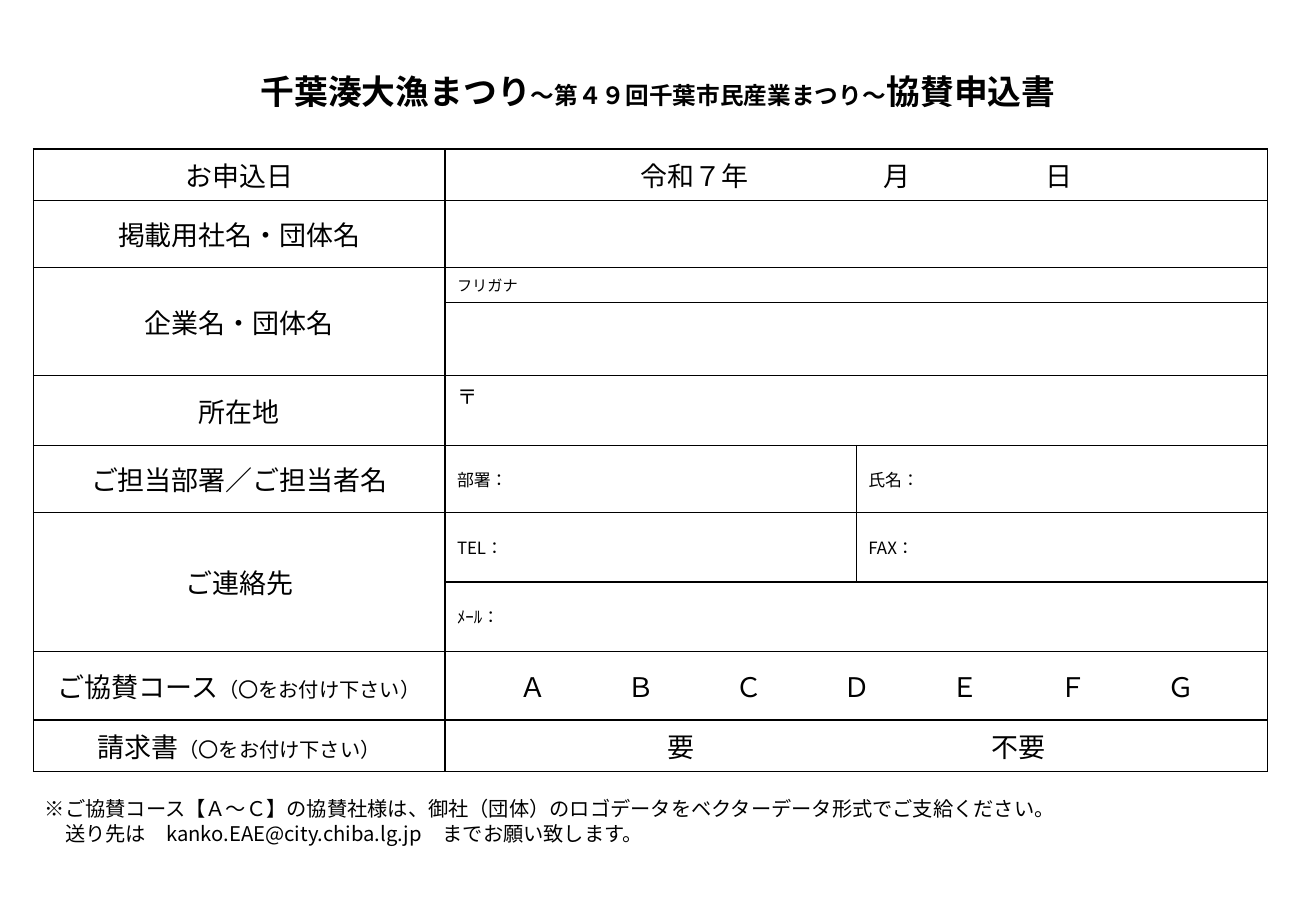
from lxml import etree
from pptx import Presentation
from pptx.dml.color import RGBColor
from pptx.enum.lang import MSO_LANGUAGE_ID
from pptx.enum.text import MSO_ANCHOR, PP_ALIGN
from pptx.oxml.ns import qn
from pptx.util import Cm, Pt

LEFT, CENTER = PP_ALIGN.LEFT, PP_ALIGN.CENTER
TOP, MIDDLE = MSO_ANCHOR.TOP, MSO_ANCHOR.MIDDLE
JAPANESE = MSO_LANGUAGE_ID.JAPANESE
FONT = "Noto Sans CJK JP"
COLORS = {"ink": "000000"}
EM = 16 * 2.54 / 72  # width of one 16 pt character in cm
ANSWER_WIDTH = 16.71  # text width of the answer column in cm


def write(paragraph, spans, align=LEFT, bold=False):
    """Fill a paragraph with (text, size) spans."""
    paragraph.alignment = align
    for text, size in spans:
        span = paragraph.add_run()
        span.text = text
        span.font.size = Pt(size)
        span.font.name = FONT
        span.font.bold = bold
        span.font.language_id = JAPANESE
        span.font.color.rgb = RGBColor.from_string(COLORS["ink"])
        east_asian = etree.SubElement(span._r.get_or_add_rPr(), qn("a:ea"))
        east_asian.set("typeface", FONT)


def add_tabs(paragraph, positions):
    """Add left tab stops, given in cm."""
    tabs = etree.SubElement(paragraph._p.get_or_add_pPr(), qn("a:tabLst"))
    for position in positions:
        etree.SubElement(tabs, qn("a:tab"), pos=str(Cm(position)), algn="l")


deck = Presentation()
deck.slide_width, deck.slide_height = Cm(27.51), Cm(19.05)
page = deck.slides.add_slide(deck.slide_layouts[6])

# Title
box = page.shapes.add_textbox(Cm(5.13), Cm(0.91), Cm(17.25), Cm(1.42))
box.text_frame.word_wrap = False
title = box.text_frame.paragraphs[0]
title.line_spacing = Pt(36.5)
write(title, [("千葉湊大漁まつり", 20),
              ("～第４９回千葉市民産業まつり～", 14),
              ("協賛申込書", 20)], CENTER, bold=True)

# Form table
row_heights = [1.07, 1.4, 0.74, 1.52, 1.47, 1.4, 1.45, 1.45, 1.44, 1.07]
form = page.shapes.add_table(len(row_heights), 3, Cm(0.7), Cm(3.12),
                             Cm(25.8), Cm(sum(row_heights))).table
form.first_row = form.horz_banding = False
for column in form.columns:
    column.width = Cm(8.6)
for row, height in zip(form.rows, row_heights):
    row.height = Cm(height)

# Cell borders and fill
for cell in form.iter_cells():
    properties = cell._tc.get_or_add_tcPr()
    for side in ("lnL", "lnR", "lnT", "lnB"):
        line = etree.SubElement(properties, qn(f"a:{side}"), w=str(Pt(1)))
        fill = etree.SubElement(line, qn("a:solidFill"))
        etree.SubElement(fill, qn("a:srgbClr"), val=COLORS["ink"])
    cell.fill.background()
    cell.vertical_anchor = MIDDLE

# Merged cells
for row in (0, 1, 2, 3, 4, 7, 8, 9):
    form.cell(row, 1).merge(form.cell(row, 2))
for row in (2, 6):
    form.cell(row, 0).merge(form.cell(row + 1, 0))

# Row labels
circle_hint = ("（〇をお付け下さい）", 12)
labels = {
    0: [("お申込日", 16)],
    1: [("掲載用社名・団体名", 16)],
    2: [("企業名・団体名", 16)],
    4: [("所在地", 16)],
    5: [("ご担当部署／ご担当者名", 16)],
    6: [("ご連絡先", 16)],
    8: [("ご協賛コース", 16), circle_hint],
    9: [("請求書", 16), circle_hint],
}
for row, spans in labels.items():
    write(form.cell(row, 0).text_frame.paragraphs[0], spans, CENTER)

# Field prompts
prompts = [
    (2, 1, "フリガナ", 9),
    (4, 1, "〒", 12),
    (5, 1, "部署：", 10),
    (5, 2, "氏名：", 10),
    (6, 1, "TEL：", 10),
    (6, 2, "FAX：", 10),
    (7, 1, "ﾒｰﾙ：", 10),
]
for row, column, text, size in prompts:
    write(form.cell(row, column).text_frame.paragraphs[0], [(text, size)])
form.cell(4, 1).vertical_anchor = TOP

# Choices: row, words, offset of each word and total length in characters
choices = [
    (0, ["令和７年", "月", "日"], [0, 9, 15], 16),
    (8, list("ＡＢＣＤＥＦＧ"), range(0, 28, 4), 25),
    (9, ["要", "不要"], [0, 12], 14),
]
for row, words, offsets, length in choices:
    paragraph = form.cell(row, 1).text_frame.paragraphs[0]
    start = (ANSWER_WIDTH - length * EM) / 2
    add_tabs(paragraph, [start + offset * EM for offset in offsets])
    write(paragraph, [("\t" + "\t".join(words), 16)])

# Notes
box = page.shapes.add_textbox(Cm(0.69), Cm(16.54), Cm(25.81), Cm(1.27))
box.text_frame.word_wrap = True
note = box.text_frame.paragraphs[0]
address = box.text_frame.add_paragraph()
address._p.get_or_add_pPr().set("marL", str(Cm(0.42)))
write(note, [("※ご協賛コース【Ａ～Ｃ】の協賛社様は、御社（団体）のロゴデータを"
              "ベクターデータ形式でご支給ください。", 12)])
write(address, [("送り先は　kanko.EAE@city.chiba.lg.jp　までお願い致します。", 12)])
for paragraph in (note, address):
    paragraph.line_spacing = Pt(14.3)

deck.save("out.pptx")
